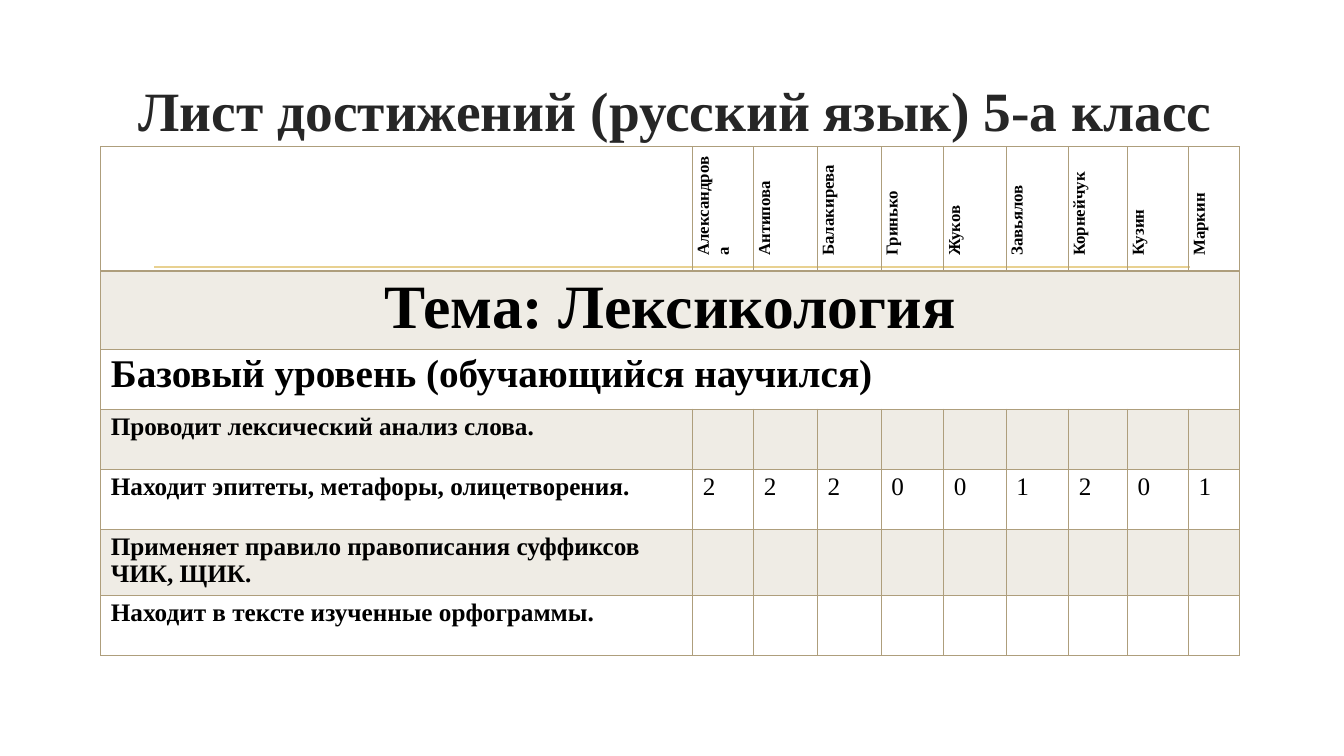
from lxml import etree
from pptx import Presentation
from pptx import util as u
from pptx.dml.color import RGBColor
from pptx.enum import shapes, text
from pptx.oxml.ns import qn

Pt = u.Pt
ALIGN = text.PP_ALIGN
TAN, BAND = "AE9E7C", "EFECE5"


def color(code):
    return RGBColor.from_string(code)


def write(frame, words, size=18, bold=True, fill="000000", align=ALIGN.LEFT, spacing=0.96, indent=0):
    paragraph = frame.paragraphs[0]
    paragraph.alignment = align
    paragraph.line_spacing = spacing
    if indent:
        paragraph._p.get_or_add_pPr().set("marL", str(Pt(indent)))
    run = paragraph.add_run()
    run.text = words
    run.font.name = "Times New Roman"
    run.font.size = Pt(size)
    run.font.bold = bold
    run.font.color.rgb = color(fill)


prs = Presentation()
prs.slide_width, prs.slide_height = Pt(960), Pt(540)
slide = prs.slides.add_slide(prs.slide_layouts[5])

# Gold rule behind the table
rule = slide.shapes.add_connector(shapes.MSO_CONNECTOR.STRAIGHT, Pt(110.2), Pt(190.8), Pt(850.3), Pt(190.8))
rule.line.color.rgb = color("E8D191")
rule.line.width = Pt(1.25)
etree.SubElement(rule._element.spPr, qn("a:effectLst"))

# Title
title = slide.shapes.title
title.left, title.top, title.width, title.height = Pt(79.2), Pt(51.8), Pt(806.4), Pt(52.6)
title.text_frame.vertical_anchor = text.MSO_ANCHOR.MIDDLE
title.text_frame.word_wrap = True
write(title.text_frame, "Лист достижений (русский язык) 5-а класс",
      size=39.6, fill="262626", align=ALIGN.CENTER, spacing=1.0)

# Achievement table content
pupils = ["Александрова", "Антипова", "Балакирева", "Гринько", "Жуков",
          "Завьялов", "Корнейчук", "Кузин", "Маркин"]
skills = [
    ("Проводит лексический анализ слова.", ""),
    ("Находит эпитеты, метафоры, олицетворения.", "222001201"),
    ("Применяет правило правописания суффиксов ЧИК, ЩИК.", ""),
    ("Находит в тексте изученные орфограммы.", ""),
]
widths = [422.8, 43.7, 45.6, 45.5, 44.7, 44.6, 44.6, 42, 43.6, 36.5]
heights = [89, 55.7, 42.9, 42.9, 42.9, 47.1, 42.9]

# Grid, borders and bands
table = slide.shapes.add_table(len(heights), len(widths), Pt(72), Pt(104.7),
                               Pt(sum(widths)), Pt(sum(heights))).table
for column, width in zip(table.columns, widths):
    column.width = Pt(width)
for r, height in enumerate(heights):
    table.rows[r].height = Pt(height)
    for cell in table.rows[r].cells:
        props = cell._tc.get_or_add_tcPr()
        for side in "LRTB":
            thick = 2 if (r, side) in ((0, "B"), (1, "T")) else 1
            border = etree.SubElement(props, qn("a:ln" + side), w=str(Pt(thick)))
            paint = etree.SubElement(border, qn("a:solidFill"))
            etree.SubElement(paint, qn("a:srgbClr"), val=TAN)
        if r % 2:
            cell.fill.solid()
            cell.fill.fore_color.rgb = color(BAND)
        else:
            cell.fill.background()

# Pupil names, turned upwards
for c, pupil in enumerate(pupils, start=1):
    cell = table.cell(0, c)
    cell._tc.get_or_add_tcPr().set("vert", "vert270")
    cell.margin_left = cell.margin_right = Pt(5.4)
    cell.margin_top = cell.margin_bottom = 0
    write(cell.text_frame, pupil, size=12, align=ALIGN.JUSTIFY, spacing=1.07, indent=5.65)

# Topic and level rows across the full width
for r, words, size, align in [(1, "Тема: Лексикология", 44, ALIGN.CENTER),
                              (2, "Базовый уровень (обучающийся научился)", 28, ALIGN.LEFT)]:
    table.cell(r, 0).merge(table.cell(r, len(pupils)))
    write(table.cell(r, 0).text_frame, words, size=size, align=align)

# Skills and marks
for r, (skill, marks) in enumerate(skills, start=3):
    write(table.cell(r, 0).text_frame, skill)
    for c, mark in enumerate(marks, start=1):
        write(table.cell(r, c).text_frame, mark, bold=False)

prs.save("out.pptx")
